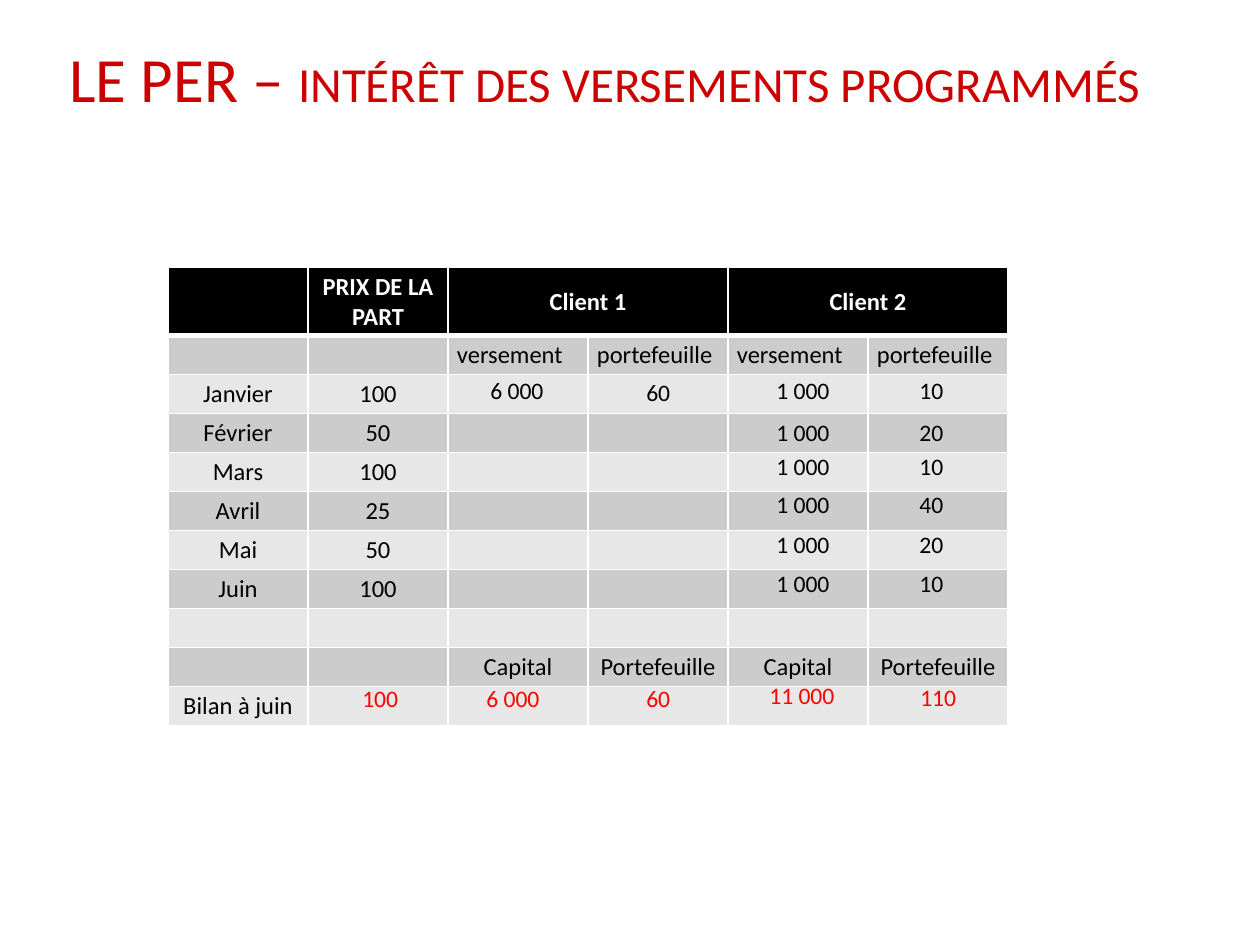
import lxml.etree
import pptx
import pptx.dml.color
import pptx.enum.text
import pptx.oxml.ns
import pptx.util

PX = 914400 // 126
COLORS = {"white": "FFFFFF", "black": "000000", "dark": "CCCCCC",
          "light": "E7E7E7", "title": "CC0000", "result": "FF0000"}
CENTER = pptx.enum.text.PP_ALIGN.CENTER
LEFT = pptx.enum.text.PP_ALIGN.LEFT
MIDDLE = pptx.enum.text.MSO_ANCHOR.MIDDLE
TOP = pptx.enum.text.MSO_ANCHOR.TOP
BOTTOM = pptx.enum.text.MSO_ANCHOR.BOTTOM
FIT = pptx.enum.text.MSO_AUTO_SIZE.SHAPE_TO_FIT_TEXT
FIXED = pptx.enum.text.MSO_AUTO_SIZE.NONE

COL_W, HEAD_H, ROW_H = 140, 67, 39
ROWS = [
    ["", "PRIX DE LA PART", "Client 1", "", "Client 2", ""],
    ["", "", "versement", "portefeuille", "versement", "portefeuille"],
    ["Janvier", "100", "", "", "", ""],
    ["Février", "50", "", "", "", ""],
    ["Mars", "100", "", "", "", ""],
    ["Avril", "25", "", "", "", ""],
    ["Mai", "50", "", "", "", ""],
    ["Juin", "100", "", "", "", ""],
    ["", "", "", "", "", ""],
    ["", "", "Capital", "Portefeuille", "Capital", "Portefeuille"],
    ["Bilan à juin", "", "", "", "", ""],
]
MONTH_TOPS = [370, 412, 446, 484, 524, 563]
CLIENT_2_SHARES = ["10", "20", "10", "40", "20", "10"]
CLIENT_1 = [("6 000", 478, 370), ("60", 634, 372)]
RESULTS = [("100", 350, 678), ("6 000", 474, 678), ("60", 634, 678),
           ("11 000", 757, 675), ("110", 908, 677)]
VALUE_WIDTHS = {2: 49, 3: 62, 5: 79, 6: 92}  # by number of characters


def px(n):
    return pptx.util.Emu(n * PX)


def assign(obj, values):
    for name, value in values.items():
        setattr(obj, name, value)


class Deck:
    def __init__(self, width, height, font):
        self.prs = pptx.Presentation()
        self.prs.slide_width, self.prs.slide_height = px(width), px(height)
        self.font = font
        self.s = self.prs.slides.add_slide(self.prs.slide_layouts[6])

    def run(self, p, text, size, color, bold=False):
        r = p.add_run()
        r.text = text
        assign(r.font, {"name": self.font, "size": pptx.util.Pt(size), "bold": bold})
        r.font.color.rgb = pptx.dml.color.RGBColor.from_string(COLORS[color])

    def text(self, x, y, w, h, runs, **frame):
        sp = self.s.shapes.add_textbox(px(x), px(y), px(w), px(h))
        tf = sp.text_frame
        assign(tf, {"word_wrap": False, "auto_size": FIT, **frame})
        for text, size, color in runs:
            self.run(tf.paragraphs[0], text, size, color)

    def value(self, text, x, y, color="black"):
        self.text(x, y, VALUE_WIDTHS[len(text)], 42, [(text, 13.5, color)])

    def borders(self, cell, widths):
        tc_pr = cell._tc.get_or_add_tcPr()
        for side, width in widths.items():
            ln = lxml.etree.SubElement(tc_pr, pptx.oxml.ns.qn(f"a:ln{side}"),
                                       w=str(pptx.util.Pt(width)))
            fill = lxml.etree.SubElement(ln, pptx.oxml.ns.qn("a:solidFill"))
            lxml.etree.SubElement(fill, pptx.oxml.ns.qn("a:srgbClr"), val=COLORS["white"])

    def cell(self, cell, text, row):
        head = row == 0
        assign(cell, {"margin_left": px(9), "margin_right": px(9),
                      "margin_top": px(5), "margin_bottom": px(4),
                      "vertical_anchor": MIDDLE if head else TOP})
        self.borders(cell, {"L": 1, "R": 1, "T": 3 if row == 1 else 1, "B": 3 if head else 1})
        cell.fill.solid()
        fill = "black" if head else "dark" if row % 2 else "light"
        cell.fill.fore_color.rgb = pptx.dml.color.RGBColor.from_string(COLORS[fill])
        p = cell.text_frame.paragraphs[0]
        p.alignment = LEFT if row == 1 else CENTER
        if text:
            self.run(p, text, 14, "white" if head else "black", head)
        else:
            # keeps an empty cell from growing to the default text size
            lxml.etree.SubElement(p._p, pptx.oxml.ns.qn("a:endParaRPr"), sz="1400")

    def table(self, x, y, rows, merges):
        n_rows, n_cols = len(rows), len(rows[0])
        height = HEAD_H + ROW_H * (n_rows - 1)
        table = self.s.shapes.add_table(n_rows, n_cols, px(x), px(y),
                                        px(COL_W * n_cols), px(height)).table
        for col in table.columns:
            col.width = px(COL_W)
        for i, texts in enumerate(rows):
            table.rows[i].height = px(ROW_H if i else HEAD_H)
            for j, text in enumerate(texts):
                self.cell(table.cell(i, j), text, i)
        for j in merges:
            table.cell(0, j).merge(table.cell(0, j + 1))


def main():
    deck = Deck(1260, 945, "Calibri")
    deck.table(168, 267, ROWS, merges=(2, 4))
    for text, x, y in CLIENT_1:
        deck.value(text, x, y)
    for y, shares in zip(MONTH_TOPS, CLIENT_2_SHARES):
        deck.value("1 000", 764, y)
        deck.value(shares, 907, y)
    for text, x, y in RESULTS:
        deck.value(text, x, y, "result")
    deck.text(57, -44, 1203, 165,
              [("LE PER – ", 36, "title"),
               ("INTÉRÊT DES VERSEMENTS PROGRAMMÉS", 28, "title")],
              word_wrap=True, auto_size=FIXED, vertical_anchor=BOTTOM)
    deck.prs.save("out.pptx")


if __name__ == "__main__":
    main()
